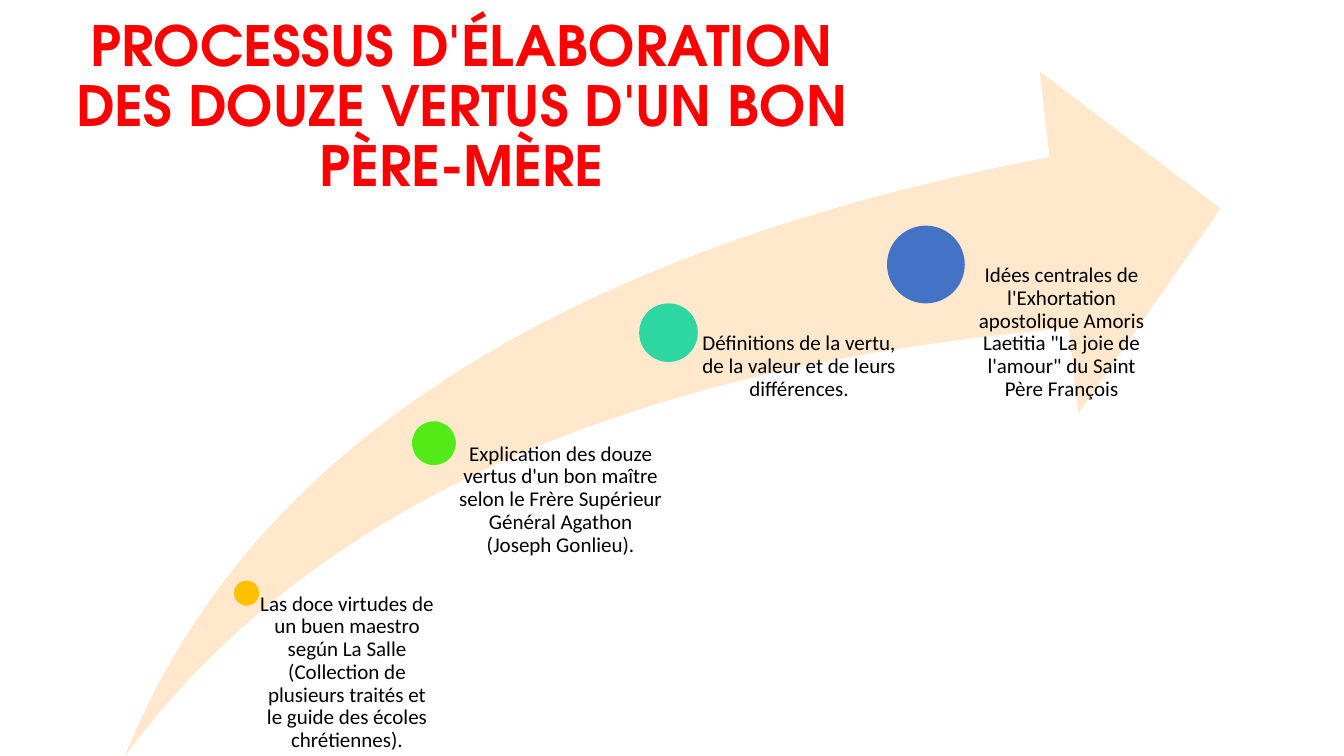
from pptx import Presentation
from pptx import util as u
from pptx.dml.color import RGBColor
from pptx.enum import shapes, text

COLOURS = {
    "title": "FF0000",
    "arrow": "FFE8CC",
    "body": "000000",
    "amber": "FFC000",
    "green": "53EB17",
    "teal": "2ED7A1",
    "blue": "4472C4",
}

TITLE = "PROCESSUS D'ÉLABORATION DES DOUZE VERTUS D'UN BON PÈRE-MÈRE"

# centre x, centre y, dot diameter and text width are fractions of the arrow box
STEPS = [
    (0.111, 0.762, 0.023, 0.171, "amber",
     "Las doce virtudes de un buen maestro según La Salle "
     "(Collection de plusieurs traités et le guide des écoles chrétiennes)."),
    (0.282, 0.543, 0.04, 0.21, "green",
     "Explication des douze vertus d'un bon maître selon le Frère Supérieur "
     "Général Agathon (Joseph Gonlieu)."),
    (0.496, 0.3815, 0.0535, 0.21, "teal",
     "Définitions de la vertu, de la valeur et de leurs différences."),
    (0.731, 0.282, 0.071, 0.21, "blue",
     "Idées centrales de l'Exhortation apostolique Amoris Laetitia "
     "\"La joie de l'amour\" du Saint Père François"),
]


def points(*lengths):
    return [u.Pt(length) for length in lengths]


def add_filled_shape(slide, kind, box, colour):
    shape = slide.shapes.add_shape(kind, *points(*box))
    shape.shadow.inherit = False
    shape.fill.solid()
    shape.fill.fore_color.rgb = RGBColor.from_string(COLOURS[colour])
    shape.line.fill.background()
    return shape


def add_centred_text(slide, box, wording, font_name, size, colour, bold=False):
    frame = slide.shapes.add_textbox(*points(*box)).text_frame
    frame.word_wrap = True
    paragraph = frame.paragraphs[0]
    paragraph.alignment = text.PP_ALIGN.CENTER
    paragraph.line_spacing = 0.9
    run = paragraph.add_run()
    run.text = wording
    run.font.name = font_name
    run.font.size = u.Pt(size)
    run.font.bold = bold
    run.font.color.rgb = RGBColor.from_string(COLOURS[colour])
    return frame


def add_title(slide, box):
    frame = add_centred_text(slide, box, TITLE, "TeX Gyre Adventor", 39.6, "title", True)
    frame.vertical_anchor = text.MSO_ANCHOR.MIDDLE


def add_step(slide, box, step):
    left, top, width, height = box
    across, down, dot_share, text_share, colour, wording = step
    centre_x = left + across * width
    centre_y = top + down * height
    diameter = dot_share * width
    dot_box = (centre_x - diameter / 2, centre_y - diameter / 2, diameter, diameter)
    add_filled_shape(slide, shapes.MSO_SHAPE.OVAL, dot_box, colour)

    text_box = (centre_x, centre_y, text_share * width, top + height - centre_y)
    frame = add_centred_text(slide, text_box, wording, "Calibri", 15, "body")
    frame.margin_left = u.Pt(diameter * 0.53)
    frame.margin_top = frame.margin_right = frame.margin_bottom = 0


def add_process(slide, box):
    arrow = add_filled_shape(slide, shapes.MSO_SHAPE.SWOOSH_ARROW, box, "arrow")
    arrow.adjustments[0] = 0.25
    arrow.adjustments[1] = 0.25
    for step in STEPS:
        add_step(slide, box, step)


def main():
    presentation = Presentation()
    presentation.slide_width, presentation.slide_height = points(960, 540)
    slide = presentation.slides.add_slide(presentation.slide_layouts[6])
    add_title(slide, (19.5, 12.2, 620.6, 131))
    add_process(slide, (89.3, 51.1, 782.6, 488.9))
    presentation.save("out.pptx")


if __name__ == "__main__":
    main()
